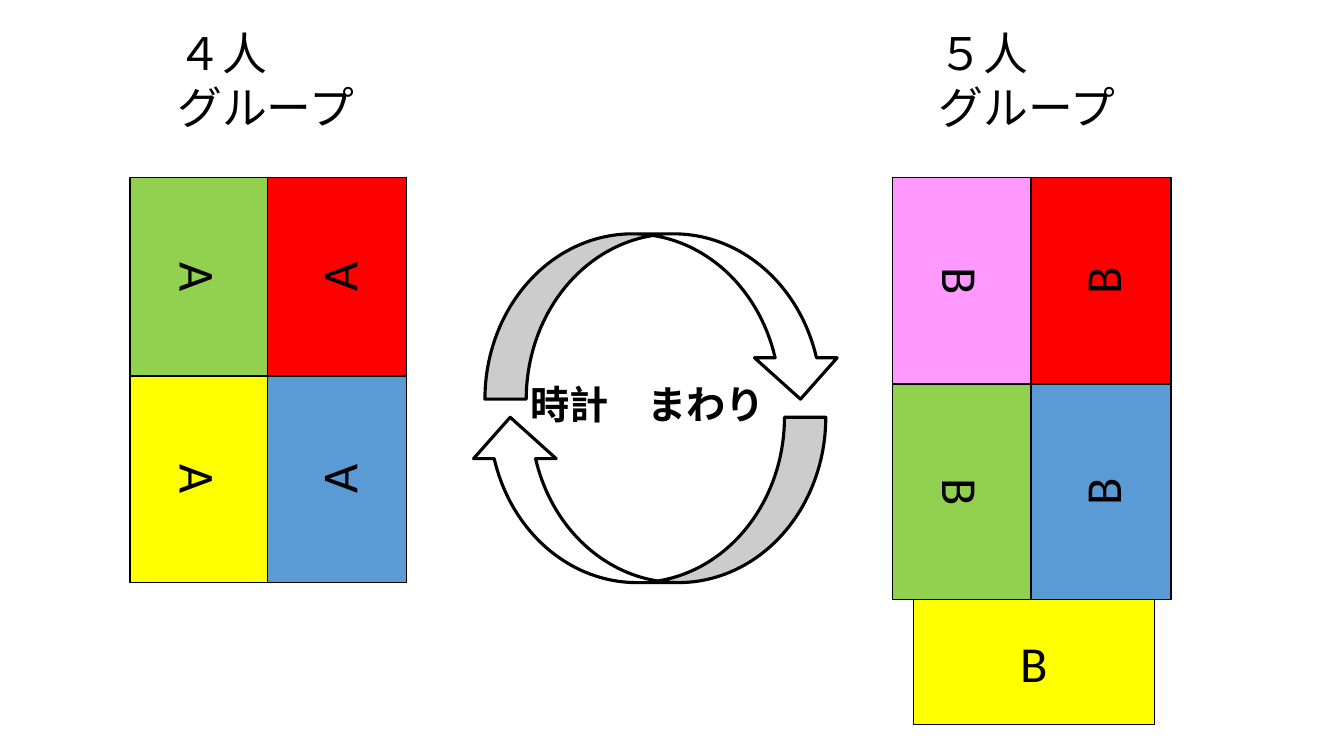
from pptx import Presentation
from pptx.dml.color import RGBColor
from pptx.enum.shapes import MSO_SHAPE
from pptx.enum.text import MSO_ANCHOR, PP_ALIGN
from pptx.util import Inches, Pt

BLACK, WHITE = "000000", "FFFFFF"


def write(shape, lines, size, align=PP_ALIGN.LEFT, bold=False):
    """Fill a shape with one paragraph per line."""
    frame = shape.text_frame
    frame.word_wrap = True
    frame.text = "\n".join(lines)
    for paragraph in frame.paragraphs:
        paragraph.alignment = align
        for name, value in {"name": "Calibri", "size": Pt(size), "bold": bold}.items():
            setattr(paragraph.font, name, value)
        paragraph.font.color.rgb = RGBColor.from_string(BLACK)


def draw(group, kind, box, fill, line_width, rotation=0):
    """Add an outlined shape whose box is given before rotation."""
    shape = group.shapes.add_shape(kind, *map(Inches, box))
    shape.rotation = rotation
    shape.shadow.inherit = False
    shape.fill.solid()
    shape.fill.fore_color.rgb = RGBColor.from_string(fill)
    shape.line.color.rgb = RGBColor.from_string(BLACK)
    shape.line.width = Pt(line_width)
    return shape


presentation = Presentation()
presentation.slide_width, presentation.slide_height = Inches(13.33), Inches(7.5)
slide = presentation.slides.add_slide(presentation.slide_layouts[6])

# Group headings
for left, people in ((1.66, "４人"), (9.21, "５人")):
    heading = slide.shapes.add_textbox(Inches(left), Inches(0.21), Inches(2), Inches(1.18))
    write(heading, [people, "グループ"], 32)

# Desks in two facing columns: letter, left, column step, desk width, row heights, colours
desks_top = 1.76
tables = [
    ("B", 8.85, 1.375, 1.39, (2.05, 2.14), (("FF99FF", "92D050"), ("FF0000", "5B9BD5"))),
    ("A", 1.29, 1.365, 1.38, (1.97, 2.05), (("92D050", "FFFF00"), ("FF0000", "5B9BD5"))),
]
for letter, left, step, width, heights, columns in tables:
    group = slide.shapes.add_group_shape()
    for column, colours in enumerate(columns):
        center_x = left + column * step + width / 2
        top = desks_top
        for height, colour in zip(heights, colours):
            # A quarter turn swaps the desk's width and height
            box = (center_x - height / 2, top + (height - width) / 2, height, width)
            desk = draw(group, MSO_SHAPE.RECTANGLE, box, colour, 1, (90, 270)[column])
            desk.text_frame.vertical_anchor = MSO_ANCHOR.MIDDLE
            write(desk, [letter], 36, PP_ALIGN.CENTER)
            top += height
    if letter == "B":
        # Fifth desk at the end of the table
        desk = draw(group, MSO_SHAPE.RECTANGLE, (9.06, top, 2.39, 1.24), "FFFF00", 1)
        desk.text_frame.vertical_anchor = MSO_ANCHOR.MIDDLE
        write(desk, [letter], 36, PP_ALIGN.CENTER)

# Clockwise arrows around the label
cycle = slide.shapes.add_group_shape()
for left, top, rotation in ((4.81, 2.32, 0), (4.65, 4.14, 180)):
    draw(cycle, MSO_SHAPE.CURVED_DOWN_ARROW, (left, top, 3.54, 1.64), WHITE, 2.25, rotation)
label = cycle.shapes.add_textbox(Inches(5.16), Inches(3.72), Inches(2.68), Inches(0.66))
write(label, ["時計　まわり"], 28, bold=True)

presentation.save("out.pptx")
